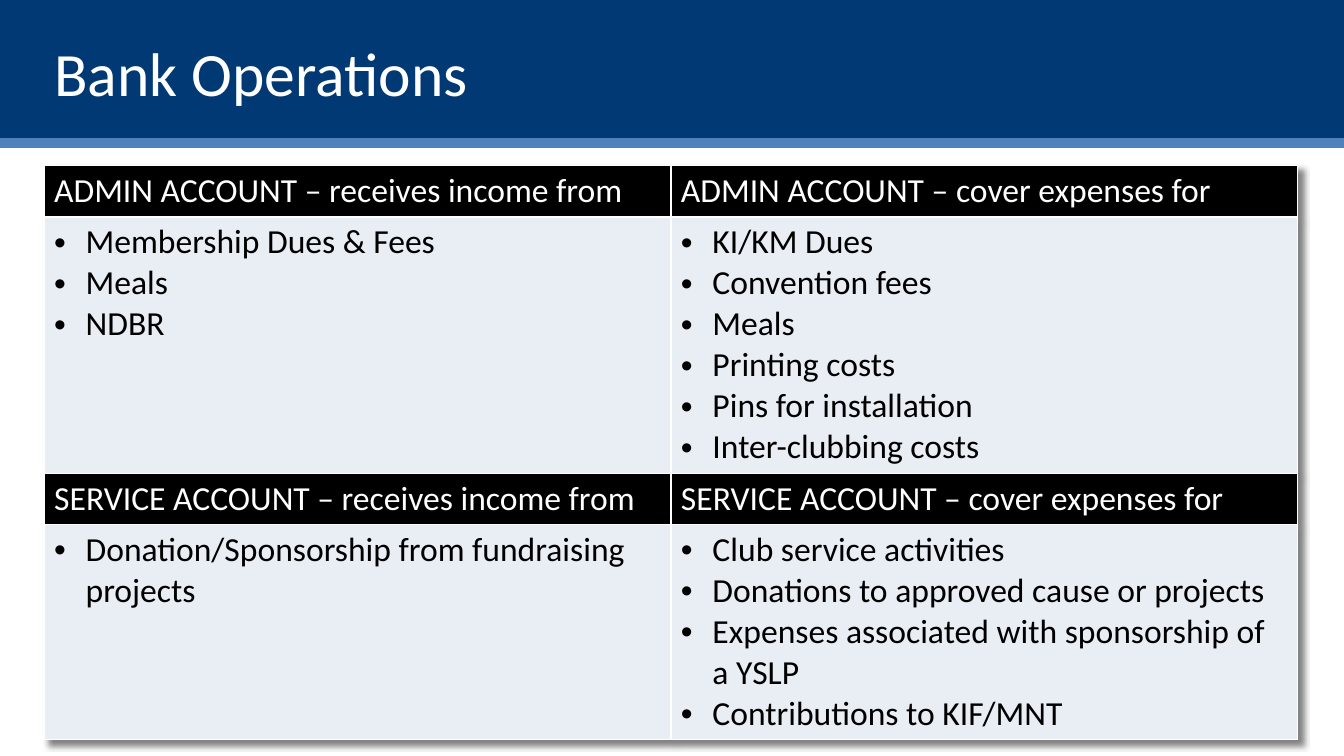
import pptx
import pptx.util
import pptx.dml.color
import pptx.enum.shapes
import pptx.enum.text
import pptx.oxml
import pptx.oxml.ns

PX = 9525  # 96 px to the inch
NS = pptx.oxml.ns.nsdecls("a")
FONT = "Calibri"


def color(code):
    return pptx.dml.color.RGBColor.from_string(code)


def write(para, text, size, code):
    run = para.add_run()
    run.text = text
    run.font.name = FONT
    run.font.size = pptx.util.Pt(size)
    run.font.bold = False
    run.font.color.rgb = color(code)


deck = pptx.Presentation()
deck.slide_width = 1280 * PX
deck.slide_height = 720 * PX
slide = deck.slides.add_slide(deck.slide_layouts[5])
shapes = slide.shapes

# Banner with its rule
band = shapes.add_shape(pptx.enum.shapes.MSO_SHAPE.RECTANGLE, 0, 0, 1280 * PX, 136 * PX)
band.shadow.inherit = False
band.fill.solid()
band.fill.fore_color.rgb = color("003974")
band.line.fill.background()

rule = shapes.add_connector(
    pptx.enum.shapes.MSO_CONNECTOR.STRAIGHT, 0, 136 * PX, 1280 * PX, 136 * PX)
rule.line.color.rgb = color("4F81BD")
rule.line.width = pptx.util.Pt(7)
rule.element.spPr.append(pptx.oxml.parse_xml(f"<a:effectLst {NS}/>"))

# Title, raised above the banner
title = shapes.title
title.left, title.top = 42 * PX, 24 * PX
title.width, title.height = 1194 * PX, 89 * PX
title.text_frame.vertical_anchor = pptx.enum.text.MSO_ANCHOR.MIDDLE
head = title.text_frame.paragraphs[0]
head.alignment = pptx.enum.text.PP_ALIGN.LEFT
write(head, "Bank Operations", 44, "FFFFFF")
shapes.element.append(title.element)

# Accounts: a text is a heading, a list is bulleted
rows = [
    (48, ["ADMIN ACCOUNT – receives income from",
          "ADMIN ACCOUNT – cover expenses for"]),
    (244, [["Membership Dues & Fees", "Meals", "NDBR"],
           ["KI/KM Dues", "Convention fees", "Meals", "Printing costs",
            "Pins for installation", "Inter-clubbing costs"]]),
    (48, ["SERVICE ACCOUNT – receives income from",
          "SERVICE ACCOUNT – cover expenses for"]),
    (205, [["Donation/Sponsorship from fundraising projects"],
           ["Club service activities",
            "Donations to approved cause or projects",
            "Expenses associated with sponsorship of a YSLP",
            "Contributions to KIF/MNT"]]),
]
total = sum(height for height, cells in rows)
frame = shapes.add_table(len(rows), 2, 42 * PX, 158 * PX, 1194 * PX, total * PX)
table = frame.table
table.first_row = False
table.horz_banding = False

# Soft shadow to the lower right
table._tbl.tblPr.insert(0, pptx.oxml.parse_xml(
    f'<a:effectLst {NS}><a:outerShdw blurRad="50800" dist="63500" dir="2700000" '
    'algn="tl" rotWithShape="0"><a:srgbClr val="000000"><a:alpha val="50000"/>'
    '</a:srgbClr></a:outerShdw></a:effectLst>'))

for r, (height, cells) in enumerate(rows):
    table.rows[r].height = height * PX
    for c, content in enumerate(cells):
        cell = table.cell(r, c)
        props = cell._tc.get_or_add_tcPr()
        for side in ("lnL", "lnR", "lnT", "lnB"):
            props.append(pptx.oxml.parse_xml(
                f'<a:{side} {NS} w="12700"><a:solidFill><a:srgbClr val="FFFFFF"/>'
                f'</a:solidFill></a:{side}>'))
        listed = isinstance(content, list)
        cell.fill.solid()
        cell.fill.fore_color.rgb = color("E9EDF4" if listed else "000000")
        for i, text in enumerate(content if listed else [content]):
            para = cell.text_frame.paragraphs[0] if i == 0 else cell.text_frame.add_paragraph()
            if listed:
                fmt = para._p.get_or_add_pPr()
                fmt.set("marL", str(30 * PX))
                fmt.set("indent", str(-30 * PX))
                fmt.append(pptx.oxml.parse_xml(f'<a:buFont {NS} typeface="Arial"/>'))
                fmt.append(pptx.oxml.parse_xml(f'<a:buChar {NS} char="•"/>'))
            write(para, text, 24, "000000" if listed else "FFFFFF")

deck.save("out.pptx")
